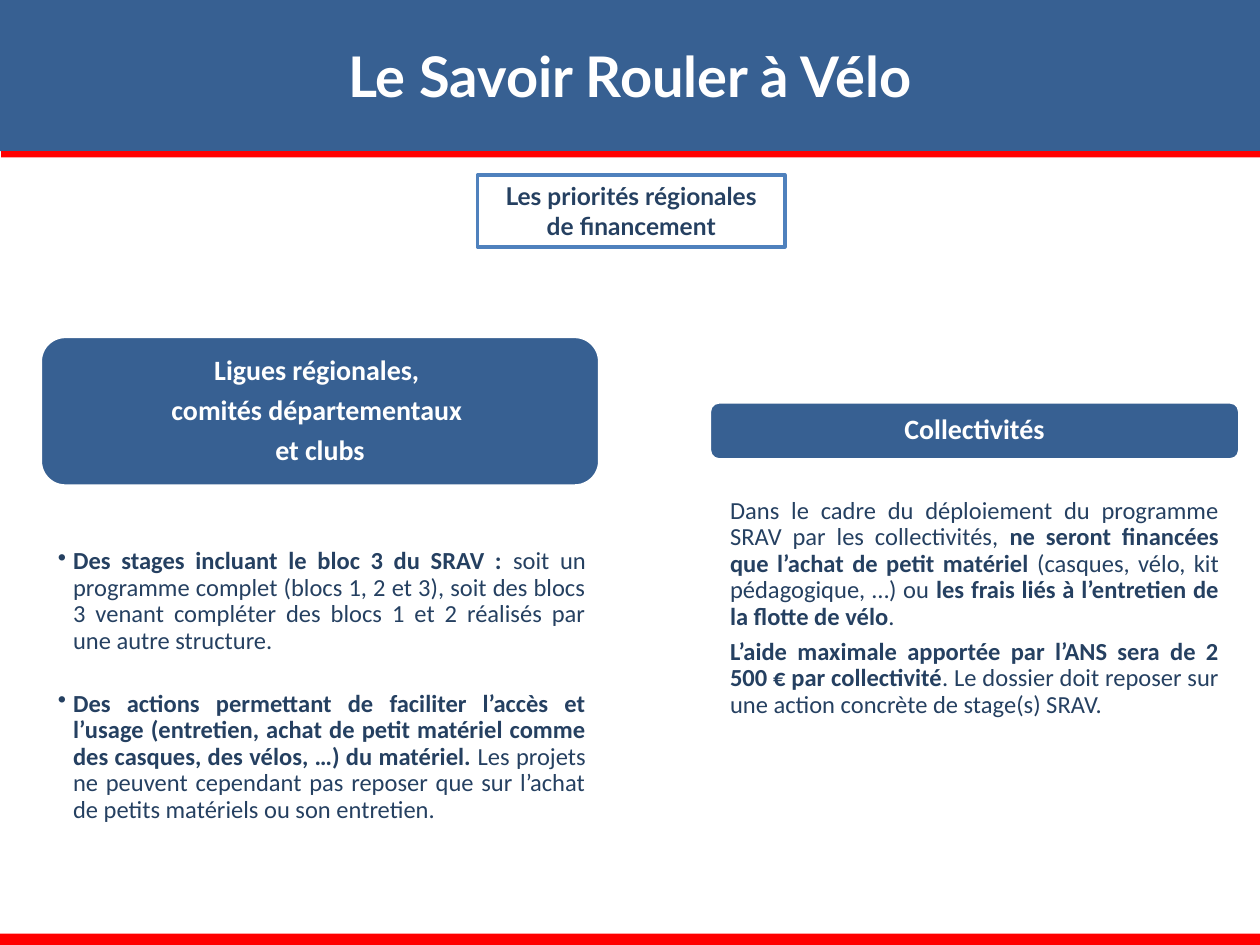
from lxml import etree
from pptx import Presentation
from pptx.dml.color import RGBColor
from pptx.enum.shapes import MSO_SHAPE
from pptx.enum.text import MSO_ANCHOR, MSO_AUTO_SIZE, PP_ALIGN
from pptx.oxml.ns import qn
from pptx.util import Inches, Pt

RECTANGLE = MSO_SHAPE.RECTANGLE
ROUNDED = MSO_SHAPE.ROUNDED_RECTANGLE
CENTER = PP_ALIGN.CENTER
JUSTIFY = PP_ALIGN.JUSTIFY
TOP = MSO_ANCHOR.TOP
MIDDLE = MSO_ANCHOR.MIDDLE
FIXED = MSO_AUTO_SIZE.NONE
GROW = MSO_AUTO_SIZE.SHAPE_TO_FIT_TEXT

SLIDE_WIDTH = Inches(10)
SLIDE_HEIGHT = Inches(7.5)
COLUMN = SLIDE_WIDTH / 100
ROW = SLIDE_HEIGHT / 100

BLUE = "376092"
NAVY = "254061"
OUTLINE = "4F81BD"
RED = "FF0000"
WHITE = "FFFFFF"


def color(value):
    return RGBColor.from_string(value)


def place(shape, box):
    left, top, width, height = box
    shape.left, shape.width = round(left * COLUMN), round(width * COLUMN)
    shape.top, shape.height = round(top * ROW), round(height * ROW)


def paint(shape, fill=None, line=None):
    if fill:
        shape.fill.solid()
        shape.fill.fore_color.rgb = color(fill)
    else:
        shape.fill.background()
    if line:
        shape.line.color.rgb = color(line)
        shape.line.width = Pt(2)
    else:
        shape.line.fill.background()


def add_box(slide, kind, box, fill=None, line=None):
    shape = slide.shapes.add_shape(kind, 0, 0, 0, 0)
    place(shape, box)
    shape.shadow.inherit = False
    paint(shape, fill, line)
    return shape


def add_bullet(paragraph, indent):
    properties = paragraph._p.get_or_add_pPr()
    properties.set("marL", str(Inches(indent)))
    properties.set("indent", str(-Inches(indent)))
    etree.SubElement(properties, qn("a:buChar")).set("char", "•")


def write(shape, paragraphs, size=14, font="Calibri", ink=NAVY, align=CENTER,
          anchor=MIDDLE, insets=(0.1, 0.05, 0.1, 0.05), line_spacing=1.0,
          after=0, bullet=False, auto_size=FIXED):
    frame = shape.text_frame
    frame.word_wrap = True
    frame.auto_size = auto_size
    frame.vertical_anchor = anchor
    (frame.margin_left, frame.margin_top,
     frame.margin_right, frame.margin_bottom) = map(Inches, insets)
    for index, runs in enumerate(paragraphs):
        paragraph = frame.add_paragraph() if index else frame.paragraphs[0]
        if bullet:
            add_bullet(paragraph, 0.12)
        paragraph.alignment = align
        paragraph.line_spacing = line_spacing
        paragraph.space_after = Pt(after)
        for text, bold in runs:
            run = paragraph.add_run()
            run.text = text
            run.font.name = font
            run.font.size = Pt(size)
            run.font.bold = bold
            run.font.color.rgb = color(ink)


def build_banner(slide, box, title):
    left, top, width, height = box
    banner = slide.shapes.title
    place(banner, box)
    paint(banner, BLUE)
    write(banner, [[(title, True)]], size=32, font="Lato", ink=WHITE)
    add_box(slide, RECTANGLE, (left + 0.1, top + height, width, 0.67), RED)


def build_topic(slide, box, text):
    topic = add_box(slide, RECTANGLE, box, line=OUTLINE)
    write(topic, [[(text, True)]], font="Lato", anchor=TOP, auto_size=GROW)


def build_audience(slide, box, header_share, body_share, headings, body,
                   kind=ROUNDED, line=None, **body_format):
    left, top, width, height = box
    header = add_box(slide, ROUNDED, (left, top, width, height * header_share),
                     BLUE, WHITE)
    write(header, [[(heading, True)] for heading in headings], size=16,
          ink=WHITE, insets=(0.07,) * 4, line_spacing=0.9, after=5.5)
    body_box = (left, top + height * (1 - body_share), width, height * body_share)
    panel = add_box(slide, kind, body_box, line=line)
    write(panel, body, align=JUSTIFY, line_spacing=0.9, **body_format)


def main():
    presentation = Presentation()
    presentation.slide_width = SLIDE_WIDTH
    presentation.slide_height = SLIDE_HEIGHT
    slide = presentation.slides.add_slide(presentation.slide_layouts[5])

    build_banner(slide, (0, 0, 100, 16), "Le Savoir Rouler à Vélo")
    add_box(slide, RECTANGLE, (0, 98.8, 100, 1.2), RED)
    build_topic(slide, (37.9, 18.53, 24.4, 7.6),
                "Les priorités régionales de financement")
    build_audience(
        slide, (56.3, 42.53, 42.1, 36.13), 0.17, 0.79,
        ["Collectivités"],
        [[("Dans le cadre du déploiement du programme SRAV par les collectivités, ", False),
          ("ne seront financées que l’achat de petit matériel", True),
          (" (casques, vélo, kit pédagogique, …) ou ", False),
          ("les frais liés à l’entretien de la flotte de vélo", True),
          (". ", False)],
         [("L’aide maximale apportée par l’ANS sera de 2 500 € par collectivité", True),
          (". Le dossier doit reposer sur une action concrète de stage(s) SRAV.", False)]],
        line=WHITE, insets=(0.06,) * 4, after=5)
    build_audience(
        slide, (3.2, 35.6, 44.4, 52.8), 0.3, 0.58,
        ["Ligues régionales, ", "comités départementaux ", "et clubs"],
        [[("Des stages incluant le bloc 3 du SRAV : ", True),
          ("soit un programme complet (blocs 1, 2 et 3), soit des blocs 3 venant "
           "compléter des blocs 1 et 2 réalisés par une autre structure.", False)],
         [("Des actions permettant de faciliter l’accès et l’usage (entretien, achat de "
           "petit matériel comme des casques, des vélos, …) du matériel. ", True),
          ("Les projets ne peuvent cependant pas reposer que sur l’achat de petits "
           "matériels ou son entretien.", False)]],
        kind=RECTANGLE, anchor=TOP, insets=(0.14, 0.02, 0.11, 0.02), after=21,
        bullet=True)

    presentation.save("out.pptx")


if __name__ == "__main__":
    main()
